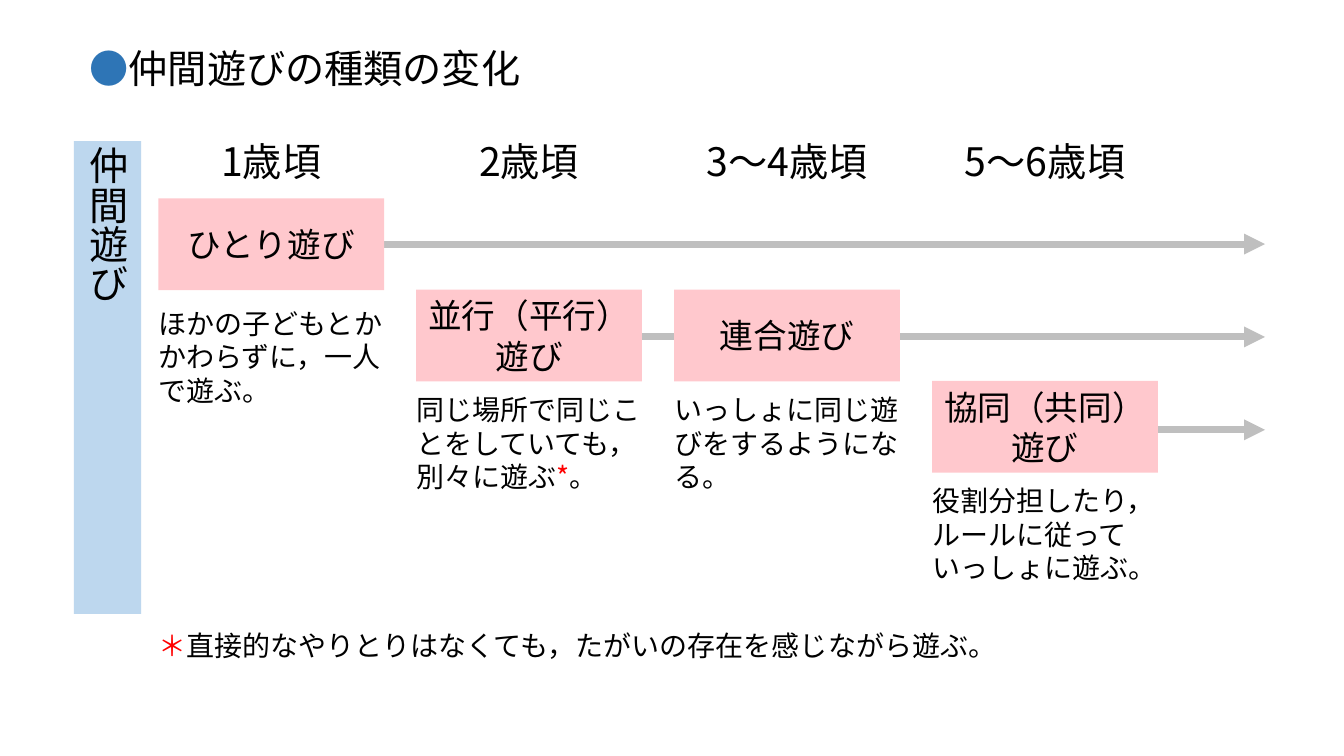
from lxml.etree import SubElement
from pptx import Presentation
from pptx.dml.color import RGBColor
from pptx.enum.shapes import MSO_CONNECTOR, MSO_SHAPE
from pptx.enum.text import MSO_ANCHOR, MSO_AUTO_SIZE, PP_ALIGN
from pptx.oxml.ns import qn
from pptx.util import Cm, Pt

FONT = "Noto Sans CJK JP"
BLACK, RED, BLUE = "000000", "FF0000", "2E75B6"
PINK, PALE_BLUE, GRAY = "FFC8CD", "BDD7EE", "BFBFBF"

COLUMN_LEFT, COLUMN_STEP, COLUMN_WIDTH = 3.99, 6.5, 5.69
ROW_TOP, ROW_STEP, ROW_HEIGHT = 5.0, 2.3, 2.31
ARROW_TOP, ARROW_STEP, ARROW_END = 6.15, 2.34, 31.88
ARROW_STARTS = [8.43, 14.4, 27.3]

# age, row, kind of play, gap below the box, description runs
STAGES = [
    ("1歳頃", 0, "ひとり遊び", 0.28,
     [("ほかの子どもとかかわらずに，一人で遊ぶ。", BLACK)]),
    ("2歳頃", 1, "並行（平行）遊び", 0.15,
     [("同じ場所で同じことをしていても，別々に遊ぶ", BLACK), ("*", RED), ("。", BLACK)]),
    ("3〜4歳頃", 1, "連合遊び", 0.15,
     [("いっしょに同じ遊びをするようになる。", BLACK)]),
    ("5〜6歳頃", 2, "協同（共同）遊び", 0.15,
     [("役割分担したり，ルールに従っていっしょに遊ぶ。", BLACK)]),
]


def color(value):
    return RGBColor.from_string(value)


def write(shape, spans, size, align=PP_ALIGN.LEFT, inset=0.0, anchor=MSO_ANCHOR.TOP):
    """Fill a shape with one paragraph of (text, colour) spans and return it."""
    frame = shape.text_frame
    frame.word_wrap = True
    frame.auto_size = MSO_AUTO_SIZE.SHAPE_TO_FIT_TEXT
    frame.vertical_anchor = anchor
    frame.margin_left = frame.margin_right = Cm(inset)
    frame.margin_top = frame.margin_bottom = Cm(0.13)
    para = frame.paragraphs[0]
    para.alignment = align
    para.font.name = FONT
    para.font.size = Pt(size)
    properties = para._p.get_or_add_pPr()
    SubElement(properties.find(qn("a:defRPr")), qn("a:ea")).set("typeface", FONT)
    for text, shade in spans:
        span = para.add_run()
        span.text = text
        span.font.color.rgb = color(shade)
    return para


def add_text(page, left, top, width, height, spans, size, **layout):
    box = page.shapes.add_textbox(Cm(left), Cm(top), Cm(width), Cm(height))
    return write(box, spans, size, **layout)


def add_box(page, left, top, width, height, fill):
    box = page.shapes.add_shape(
        MSO_SHAPE.RECTANGLE, Cm(left), Cm(top), Cm(width), Cm(height))
    box.shadow.inherit = False
    box.fill.solid()
    box.fill.fore_color.rgb = color(fill)
    box.line.fill.background()
    return box


def add_arrow(page, start, end, top):
    arrow = page.shapes.add_connector(
        MSO_CONNECTOR.STRAIGHT, Cm(start), Cm(top), Cm(end), Cm(top))
    arrow.line.color.rgb = color(GRAY)
    arrow.line.width = Pt(5)
    SubElement(arrow.line._get_or_add_ln(), qn("a:tailEnd")).set("type", "triangle")
    SubElement(arrow._element.spPr, qn("a:effectLst"))


def add_side_label(page, left, top, width, height):
    label = add_box(page, left, top, width, height, PALE_BLUE)
    write(label, [("仲間遊び", BLACK)], 28, align=PP_ALIGN.CENTER, inset=0.25)
    label.text_frame._txBody.bodyPr.set("vert", "eaVert")


def add_stage(page, left, width, age, row, kind, gap, description):
    """Place one column: age heading, pink box and description below it."""
    top = ROW_TOP + row * ROW_STEP
    add_text(page, left, 3.33, width, 1.45, [(age, BLACK)], 28, align=PP_ALIGN.CENTER)
    box = add_box(page, left, top, width, ROW_HEIGHT, PINK)
    write(box, [(kind, BLACK)], 24, align=PP_ALIGN.CENTER, anchor=MSO_ANCHOR.MIDDLE)
    add_text(page, left, top + ROW_HEIGHT + gap, width, 2.82, description, 20)


def add_footnote(page, left, top, width, height):
    spans = [("＊", RED), ("直接的なやりとりはなくても，たがいの存在を感じながら遊ぶ。", BLACK)]
    para = add_text(page, left, top, width, height, spans, 20)
    properties = para._p.get_or_add_pPr()
    properties.set("marL", str(Cm(1)))
    properties.set("indent", str(-Cm(1)))


def main():
    deck = Presentation()
    deck.slide_width, deck.slide_height = Cm(33.87), Cm(19.05)
    page = deck.slides.add_slide(deck.slide_layouts[6])
    add_text(page, 2.01, 0.99, 30, 1.45,
             [("●", BLUE), ("仲間遊びの種類の変化", BLACK)], 28, inset=0.25)
    add_side_label(page, 1.86, 3.56, 1.7, 11.91)
    for row, start in enumerate(ARROW_STARTS):
        add_arrow(page, start, ARROW_END, ARROW_TOP + row * ARROW_STEP)
    for column, stage in enumerate(STAGES):
        add_stage(page, COLUMN_LEFT + column * COLUMN_STEP, COLUMN_WIDTH, *stage)
    add_footnote(page, COLUMN_LEFT, 15.72, 21.97, 1.12)
    deck.save("out.pptx")


if __name__ == "__main__":
    main()
